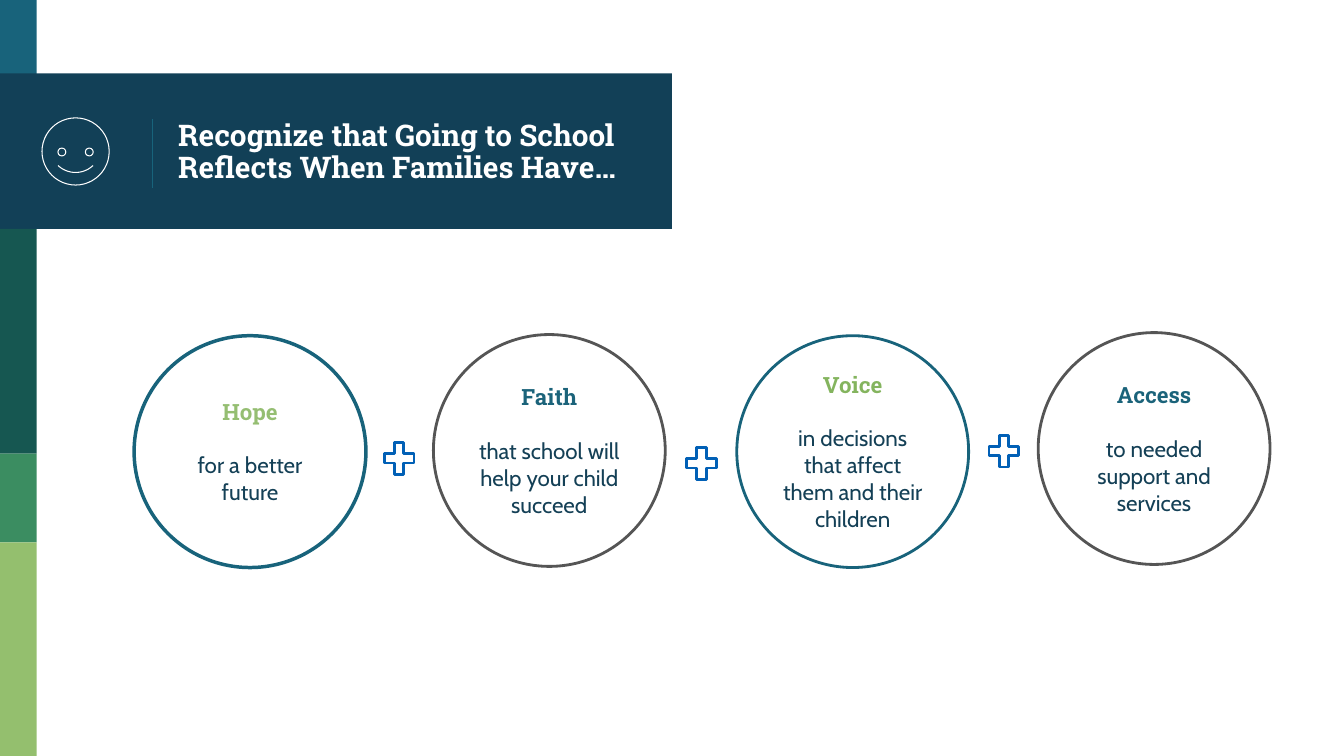
from dataclasses import dataclass
from math import asin, cos, sin

from lxml.etree import SubElement
from pptx import Presentation
from pptx.dml.color import RGBColor
from pptx.enum.shapes import MSO_CONNECTOR as Connector, MSO_SHAPE as Shape
from pptx.enum.text import MSO_ANCHOR as Anchor, PP_ALIGN as Align
from pptx.oxml.ns import qn
from pptx.util import Pt

NAVY, TEAL, WHITE = "124057", "18637B", "FFFFFF"
GRAY, BODY_COLOR, PLUS_BLUE = "555555", "144056", "0160B6"
HEADING_FONT, BODY_FONT = "Roboto Slab", "Cabin"


@dataclass
class Band:
    top: float
    width: float
    height: float
    color: str


@dataclass
class Circle:
    left: float
    top: float
    heading: str
    body: str
    heading_color: str
    line_color: str
    line_width: float = 2


BANDS = [
    Band(0, 26.1, 55.4, TEAL),
    Band(52.5, 480, 111, NAVY),
    Band(163.5, 26.1, 160.5, "165751"),
    Band(324, 26.1, 63.4, "3B8D61"),
    Band(387.4, 26.1, 152.6, "94BF6E"),
]
CIRCLES = [
    Circle(95.8, 239.8, "Hope", "for a better future", "95BE72", TEAL, 2.5),
    Circle(309.6, 239, "Faith", "that school will help your child succeed",
           "1B637A", GRAY),
    Circle(526.3, 239.8, "Voice",
           "in decisions that affect them and their children", "84B45E", TEAL),
    Circle(741.6, 237.6, "Access", "to needed support and services",
           "1B637A", GRAY),
]
CIRCLE_SIZE = 165.6
PLUS_LEFT, PLUS_PITCH = 270.7, 216
PLUS_TOPS = [311.8, 315.4, 306.7]


def rgb(color: str) -> RGBColor:
    return RGBColor.from_string(color)


def style_shape(shape, fill: str = "", line: str = "", width: float = 0.75) -> None:
    shape.shadow.inherit = False
    if fill:
        shape.fill.solid()
        shape.fill.fore_color.rgb = rgb(fill)
    else:
        shape.fill.background()
    if line:
        shape.line.color.rgb = rgb(line)
        shape.line.width = Pt(width)
    else:
        shape.line.fill.background()


def add_preset(slide, kind, left: float, top: float, width: float, height: float,
               fill: str = "", line: str = "", line_width: float = 0.75):
    shape = slide.shapes.add_shape(kind, Pt(left), Pt(top), Pt(width), Pt(height))
    style_shape(shape, fill, line, line_width)
    return shape


def set_frame(frame, inset: float) -> None:
    frame.word_wrap = True
    frame.vertical_anchor = Anchor.MIDDLE
    frame.margin_left = frame.margin_right = Pt(inset)
    frame.margin_top = frame.margin_bottom = Pt(inset)


def write(paragraph, text: str, font_name: str, size: float, color: str,
          bold: bool = False) -> None:
    paragraph.text = text
    font = paragraph.font
    font.name, font.size, font.bold = font_name, Pt(size), bold
    font.color.rgb = rgb(color)


def add_divider(slide) -> None:
    line = slide.shapes.add_connector(Connector.STRAIGHT, Pt(108.7), Pt(85),
                                      Pt(108.7), Pt(134.6))
    line.line.color.rgb = rgb(TEAL)
    line.line.width = Pt(0.75)
    SubElement(line._element.spPr, qn("a:effectLst"))


def add_smiley(slide) -> None:
    center_x, center_y = 54, 108.2
    # Face and eyes: horizontal offset, vertical offset, radius
    for offset_x, offset_y, radius in [(0, 0, 24), (-9.8, 0.4, 2.8), (9.8, 0.4, 2.8)]:
        add_preset(slide, Shape.OVAL, center_x + offset_x - radius,
                   center_y + offset_y - radius, 2 * radius, 2 * radius, line=WHITE)
    # Mouth: a shallow circular arc
    radius, half_width, arc_y, steps = 18.2, 12.5, 105, 24
    half_angle = asin(half_width / radius)
    angles = [half_angle * (1 - 2 * step / steps) for step in range(steps + 1)]
    points = [(Pt(center_x + radius * sin(angle)), Pt(arc_y + radius * cos(angle)))
              for angle in angles]
    builder = slide.shapes.build_freeform(*points[0])
    builder.add_line_segments(points[1:], close=False)
    style_shape(builder.convert_to_shape(), line=WHITE)


def add_title(slide) -> None:
    box = slide.shapes.add_textbox(Pt(120.2), Pt(55.4), Pt(350), Pt(108))
    set_frame(box.text_frame, 7.2)
    paragraph = box.text_frame.paragraphs[0]
    write(paragraph, "Recognize that Going to School Reflects When Families Have…",
          HEADING_FONT, 21.3, WHITE, bold=True)
    paragraph.line_spacing = 0.9


def add_circle(slide, circle: Circle) -> None:
    shape = add_preset(slide, Shape.OVAL, circle.left, circle.top, CIRCLE_SIZE,
                       CIRCLE_SIZE, WHITE, circle.line_color, circle.line_width)
    frame = shape.text_frame
    set_frame(frame, 5)
    heading, body = frame.paragraphs[0], frame.add_paragraph()
    write(heading, circle.heading, HEADING_FONT, 16, circle.heading_color, bold=True)
    write(body, circle.body, BODY_FONT, 16, BODY_COLOR)
    heading.space_after = Pt(19)
    heading.alignment = body.alignment = Align.CENTER


def add_plus(slide, left: float, top: float) -> None:
    plus = add_preset(slide, Shape.MATH_PLUS, left, top, 28.8, 31, WHITE, PLUS_BLUE, 2)
    plus.adjustments[0] = 0.235


def main() -> None:
    presentation = Presentation()
    presentation.slide_width, presentation.slide_height = Pt(960), Pt(540)
    slide = presentation.slides.add_slide(presentation.slide_layouts[6])

    # Side bands and title banner
    for band in BANDS:
        add_preset(slide, Shape.RECTANGLE, 0, band.top, band.width, band.height,
                   band.color)
    add_divider(slide)
    add_smiley(slide)
    add_title(slide)

    # Four circles joined by plus signs
    for circle in CIRCLES:
        add_circle(slide, circle)
    for index, top in enumerate(PLUS_TOPS):
        add_plus(slide, PLUS_LEFT + index * PLUS_PITCH, top)

    presentation.save("out.pptx")


if __name__ == "__main__":
    main()
